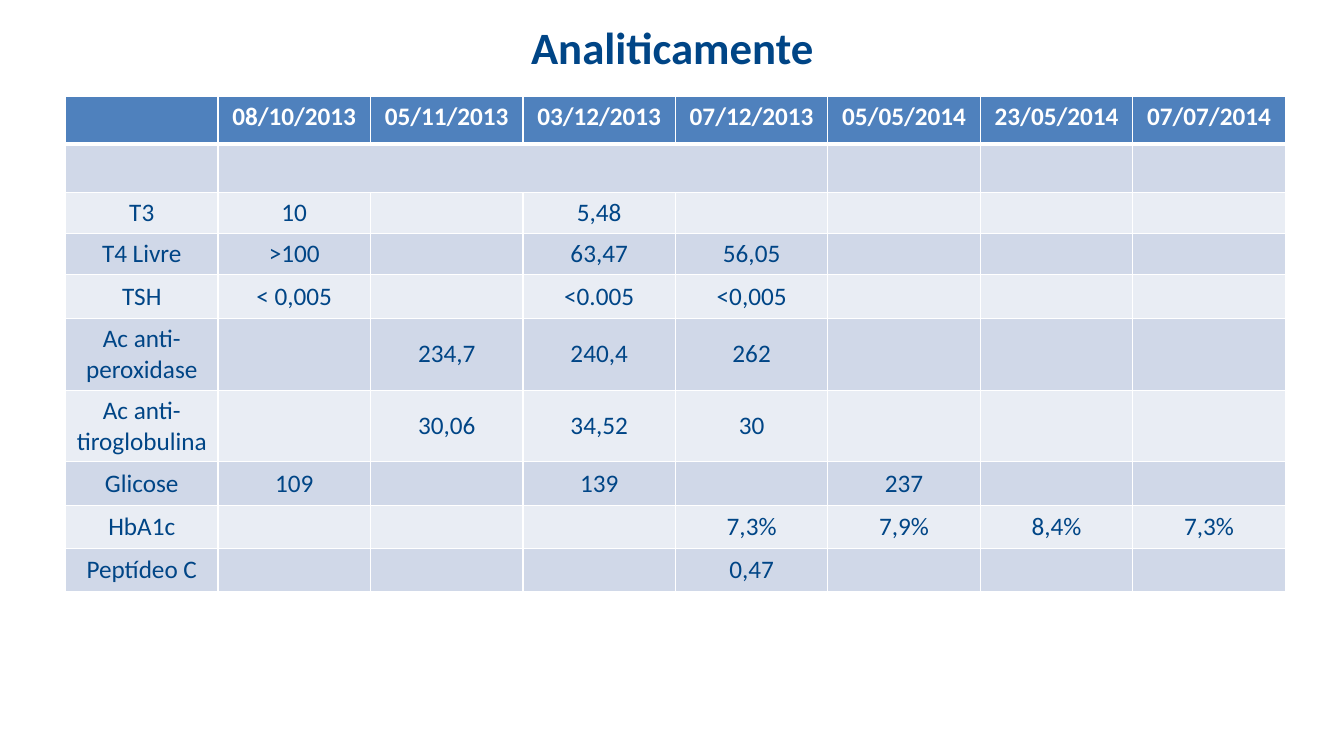
"""Build a slide with a table of laboratory results by date."""
from lxml.etree import SubElement
from pptx import Presentation
from pptx.dml.color import RGBColor as Rgb
from pptx.enum.text import MSO_ANCHOR as Anchor, PP_ALIGN as Align
from pptx.oxml.ns import qn
from pptx.util import Inches, Pt

COLORS = {"navy": "004586", "header": "4F81BD", "dark_band": "D0D8E8",
          "light_band": "E9EDF4", "white": "FFFFFF"}

DATES = ["", "08/10/2013", "05/11/2013", "03/12/2013", "07/12/2013",
         "05/05/2014", "23/05/2014", "07/07/2014"]
RESULTS = [
    [],
    ["T3", "10", "", "5,48"],
    ["T4 Livre", ">100", "", "63,47", "56,05"],
    ["TSH", "< 0,005", "", "<0.005", "<0,005"],
    ["Ac anti- peroxidase", "", "234,7", "240,4", "262"],
    ["Ac anti-tiroglobulina", "", "30,06", "34,52", "30"],
    ["Glicose", "109", "", "139", "", "237"],
    ["HbA1c", "", "", "", "7,3%", "7,9%", "8,4%", "7,3%"],
    ["Peptídeo C", "", "", "", "0,47"],
]
ROW_HEIGHTS = [0.47, 0.48, 0.4, 0.4, 0.44, 0.7, 0.7, 0.43, 0.43, 0.43]


class LabSlide:
    def __init__(self, slide):
        self.slide = slide
        self.font_name = "Calibri"

    def label(self, paragraph, text, size, color, bold):
        paragraph.alignment = Align.CENTER
        run = paragraph.add_run()
        run.text = text
        style = {"name": self.font_name, "size": Pt(size), "bold": bold}
        for attribute, value in style.items():
            setattr(run.font, attribute, value)
        run.font.color.rgb = Rgb.from_string(COLORS[color])

    def title(self, text, left, top, width, height):
        frame = self.slide.shapes.add_textbox(
            Inches(left), Inches(top), Inches(width), Inches(height)).text_frame
        settings = {"word_wrap": True, "vertical_anchor": Anchor.MIDDLE}
        for attribute, value in settings.items():
            setattr(frame, attribute, value)
        heading = frame.paragraphs[0]
        heading.line_spacing = 0.9
        self.label(heading, text, 32, "navy", True)

    def borders(self, cell, widths):
        properties = cell._tc.get_or_add_tcPr()
        for side, width in widths.items():
            line = SubElement(properties, qn(f"a:ln{side}"), w=str(Pt(width)))
            fill = SubElement(line, qn("a:solidFill"))
            SubElement(fill, qn("a:srgbClr"), val=COLORS["white"])

    def cell(self, cell, text, row):
        is_header = row == 0
        band = "header" if is_header else "dark_band" if row % 2 else "light_band"
        self.borders(cell, {"L": 1, "R": 1, "T": 3 if row == 1 else 1,
                            "B": 3 if is_header else 1})
        cell.fill.solid()
        cell.fill.fore_color.rgb = Rgb.from_string(COLORS[band])
        cell.vertical_anchor = Anchor.TOP if is_header else Anchor.MIDDLE
        if text:
            self.label(cell.text_frame.paragraphs[0], text, 18,
                       "white" if is_header else "navy", is_header)

    def table(self, rows, heights, left, top, width):
        columns = len(rows[0])
        table = self.slide.shapes.add_table(
            len(rows), columns, Inches(left), Inches(top),
            Inches(width), Inches(sum(heights))).table
        for row, (values, height) in enumerate(zip(rows, heights)):
            table.rows[row].height = Inches(height)
            padded = values + [""] * (columns - len(values))
            for column, text in enumerate(padded):
                self.cell(table.cell(row, column), text, row)
        table.cell(1, 1).merge(table.cell(1, 4))


def main():
    deck = Presentation()
    deck.slide_width, deck.slide_height = Inches(13.33), Inches(7.5)
    page = LabSlide(deck.slides.add_slide(deck.slide_layouts[6]))
    page.table([DATES] + RESULTS, ROW_HEIGHTS, 0.65, 0.96, 12.1)
    page.title("Analiticamente", 0.67, 0.17, 12, 0.66)
    deck.save("out.pptx")


if __name__ == "__main__":
    main()
